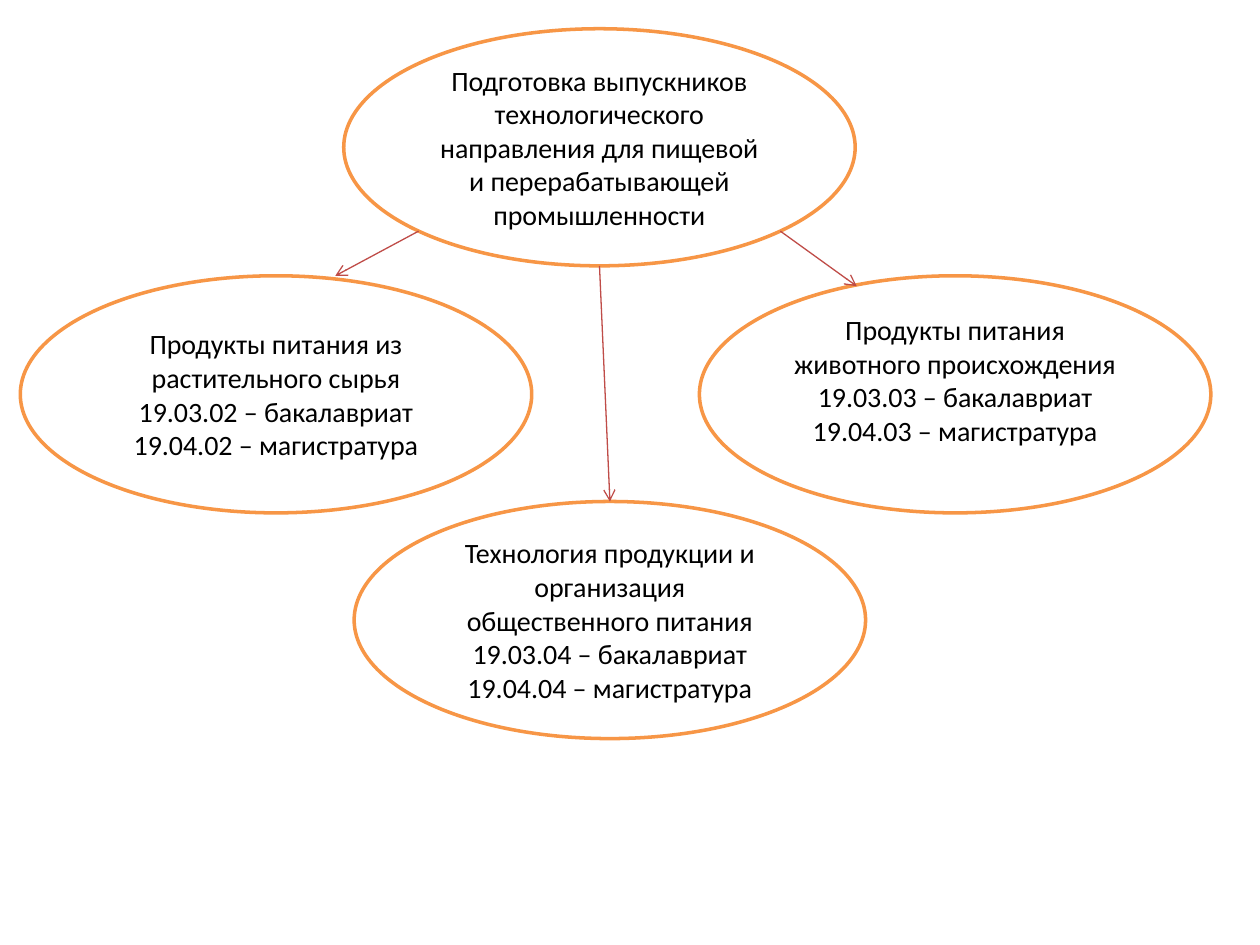
from math import cos, radians, sin

from lxml import etree
from pptx import Presentation
from pptx.dml.color import RGBColor
from pptx.enum.shapes import MSO_CONNECTOR, MSO_SHAPE
from pptx.enum.text import MSO_ANCHOR, PP_ALIGN
from pptx.oxml.ns import qn
from pptx.util import Cm, Pt

OVAL = MSO_SHAPE.OVAL
LINE = MSO_CONNECTOR.STRAIGHT
MID = MSO_ANCHOR.MIDDLE
CENTER = PP_ALIGN.CENTER

WHITE = RGBColor(0xFF, 0xFF, 0xFF)
BLACK = RGBColor(0x00, 0x00, 0x00)
ORANGE = RGBColor(0xF7, 0x96, 0x46)
RED = RGBColor(0xBF, 0x4C, 0x48)

FONT = {"name": "Calibri", "size": Pt(16)}
WIDE, HIGH = 10.31, 4.78
INSET = 0.13
SHIFT = -0.36  # first-line indent of the master's degree lines

# name: left, top, extra bottom inset (cm), lines
OVALS = {
    "goal": (6.93, 0.58, 0, [
        "Подготовка выпускников технологического направления для пищевой "
        "и перерабатывающей промышленности"]),
    "service": (7.14, 10.11, 0, [
        "Технология продукции и организация общественного питания",
        "19.03.04 – бакалавриат", "19.04.04 – магистратура"]),
    "animal": (14.1, 5.56, 0.58, [
        "Продукты питания животного происхождения",
        "19.03.03 – бакалавриат", "19.04.03 – магистратура"]),
    "plant": (0.41, 5.56, 0, [
        "Продукты питания из растительного сырья",
        "19.03.02 – бакалавриат", "19.04.02 – магистратура"]),
}

# angle on the goal oval (degrees, clockwise from the right), target, end (cm)
ARROWS = [
    (135, "plant", (6.76, 5.56)),
    (90, "service", None),
    (45, "animal", (17.27, 5.77)),
]


def add_oval(slide, left, top, extra, lines):
    oval = slide.shapes.add_shape(OVAL, Cm(left), Cm(top), Cm(WIDE), Cm(HIGH))
    oval.shadow.inherit = False
    oval.fill.solid()
    oval.fill.fore_color.rgb = WHITE
    oval.line.color.rgb = ORANGE
    oval.line.width = Pt(2)
    frame = oval.text_frame
    frame.word_wrap = True
    frame.vertical_anchor = MID
    frame.margin_bottom = Cm(INSET + extra)
    for i, line in enumerate(lines):
        para = frame.paragraphs[0] if i == 0 else frame.add_paragraph()
        para.text = line
        para.alignment = CENTER
        if i == 2:
            props = para._p.get_or_add_pPr()
            props.set("marL", "0")
            props.set("indent", str(Cm(SHIFT)))
        for key, value in FONT.items():
            setattr(para.font, key, value)
        para.font.color.rgb = BLACK
    return oval


def add_arrow(slide, start, end, target):
    """Draw an arrow to end, or to the top of target when end is None."""
    x, y = end or (0, 0)
    arrow = slide.shapes.add_connector(
        LINE, Cm(start[0]), Cm(start[1]), Cm(x), Cm(y))
    if end is None:
        arrow.end_connect(target, 0)
    arrow.line.color.rgb = RED
    arrow.line.width = Pt(0.75)
    etree.SubElement(arrow.line._get_or_add_ln(), qn("a:tailEnd"), type="arrow")
    etree.SubElement(arrow._element.spPr, qn("a:effectLst"))


def main():
    deck = Presentation()
    deck.slide_width, deck.slide_height = Cm(25.4), Cm(19.05)
    slide = deck.slides.add_slide(deck.slide_layouts[6])
    ovals = {name: add_oval(slide, *spec) for name, spec in OVALS.items()}
    left, top = OVALS["goal"][:2]
    for angle, name, end in ARROWS:
        turn = radians(angle)
        start = (left + WIDE / 2 * (1 + cos(turn)),
                 top + HIGH / 2 * (1 + sin(turn)))
        add_arrow(slide, start, end, ovals[name])
    deck.save("out.pptx")


if __name__ == "__main__":
    main()
